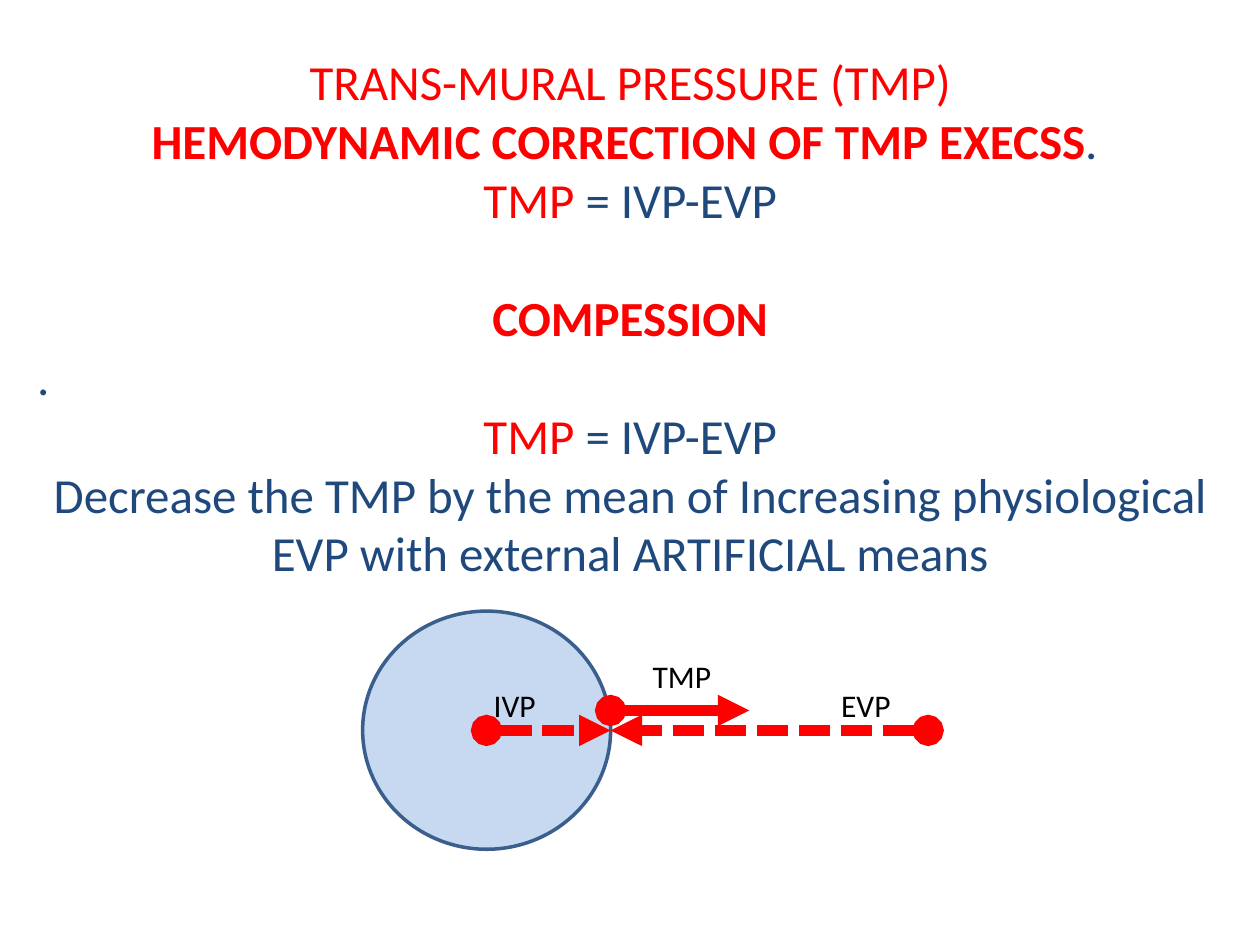
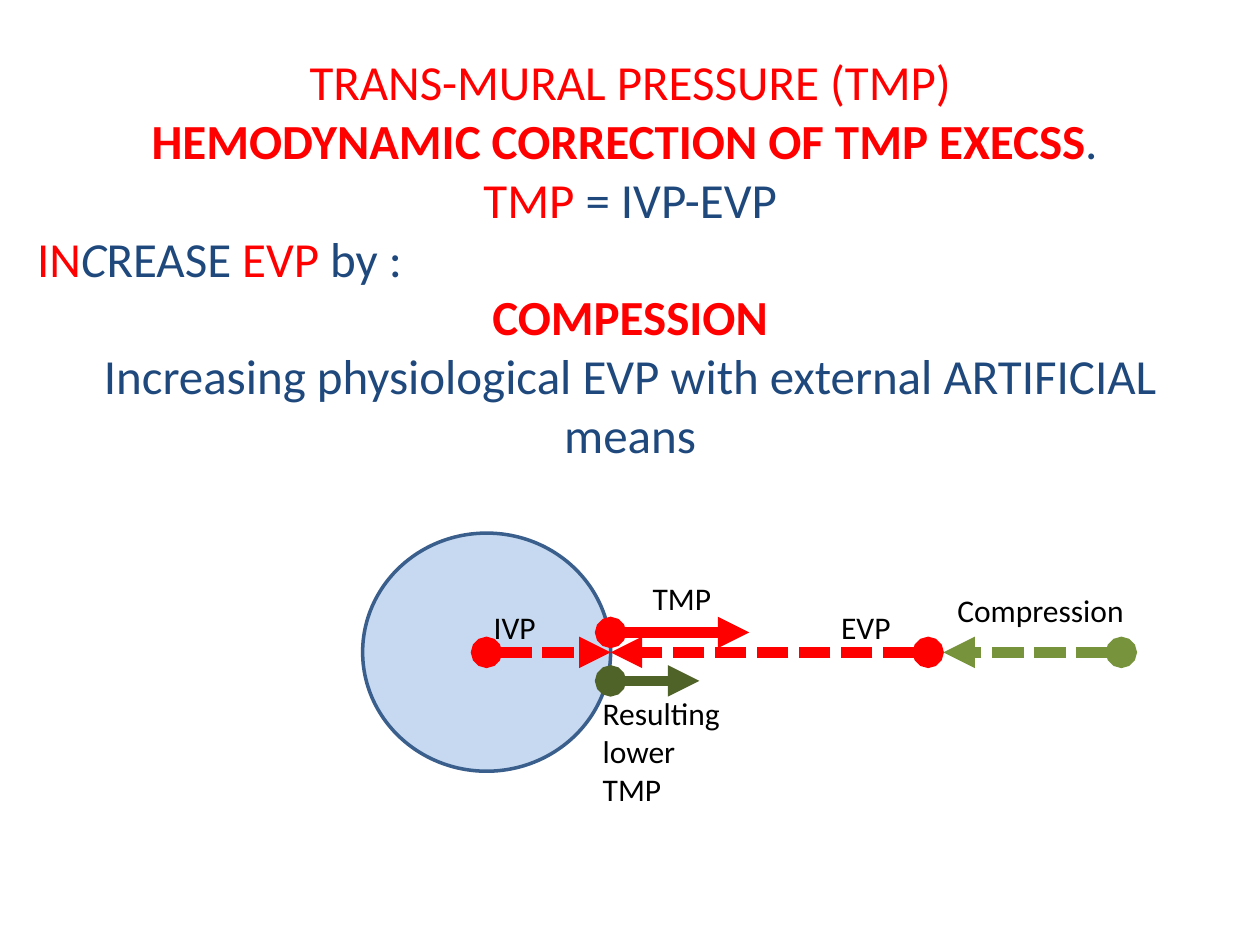
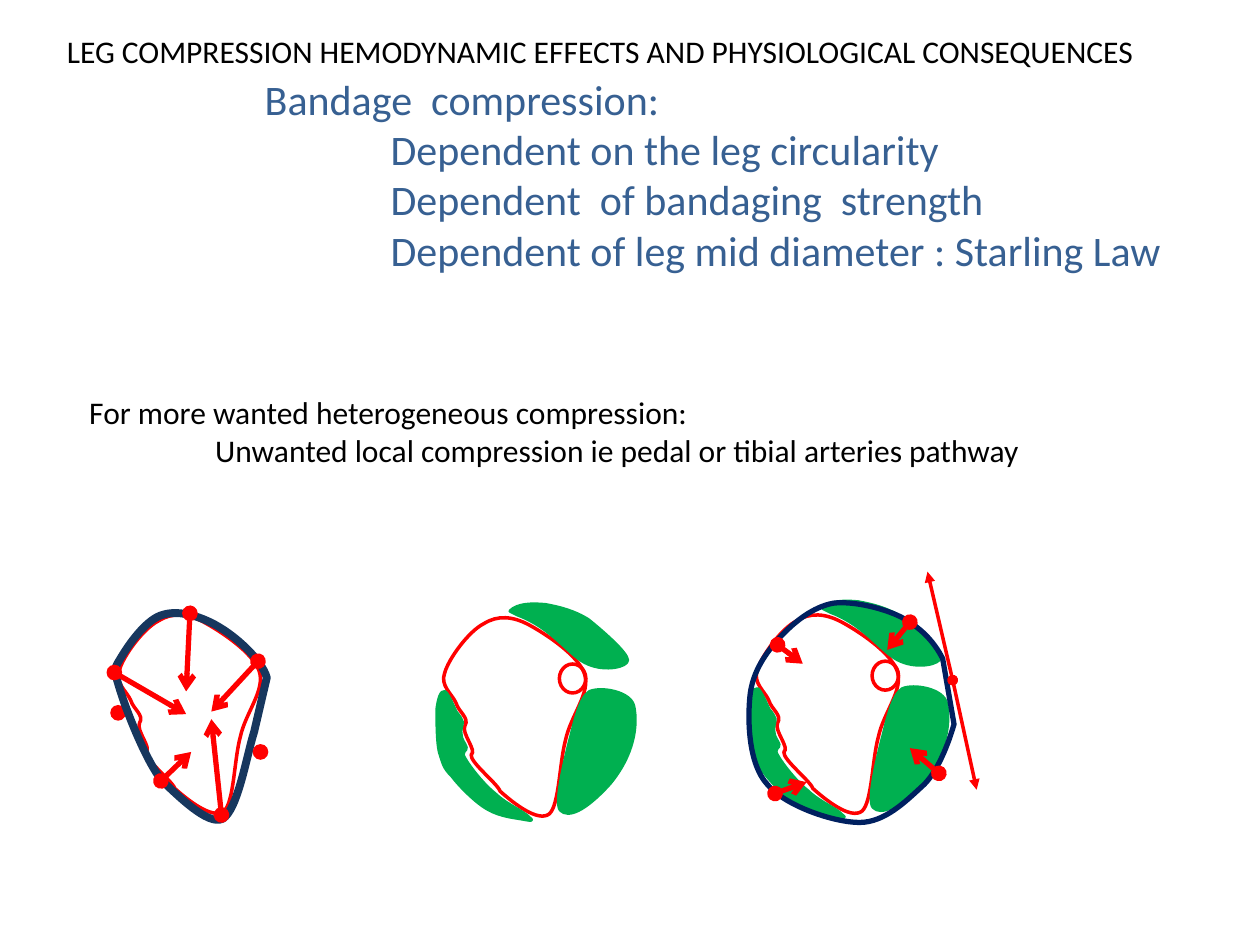
from pptx import Presentation
from pptx.dml.color import RGBColor
from pptx.enum.dml import MSO_LINE as DASH
from pptx.enum.shapes import MSO_CONNECTOR as CONN, MSO_SHAPE as SHAPE
from pptx.enum.text import MSO_AUTO_SIZE as AUTO, PP_ALIGN as ALIGN
from pptx.oxml.ns import qn
from pptx.util import Pt
from lxml.etree import SubElement

FONT = "Calibri"
RED = RGBColor(0xFF, 0x00, 0x00)
NAVY = RGBColor(0x1F, 0x49, 0x7D)
BLUE = RGBColor(0x37, 0x60, 0x92)
BLACK = RGBColor(0x00, 0x00, 0x00)
WHITE = RGBColor(0xFF, 0xFF, 0xFF)
VEIN_FILL = RGBColor(0xC6, 0xD9, 0xF1)
VEIN_LINE = RGBColor(0x3A, 0x5F, 0x8C)
OLIVE = RGBColor(0x77, 0x93, 0x3C)
DARK_OLIVE = RGBColor(0x4F, 0x62, 0x28)
GREEN = RGBColor(0x00, 0xB0, 0x50)
BANDAGE_TIGHT = RGBColor(0x17, 0x37, 0x5E)
BANDAGE_PADDED = RGBColor(0x00, 0x20, 0x60)

LINE_28 = 34     # height of one 28 pt line
GRID = 0.72      # points per unit of the leg drawings

# Leg outlines: a start point, then curves (6 numbers) or straight lines (2)
LEG = [(1, 44), (4, 33, 20, 11, 32, 5), (43, -2, 55, -1, 68, 6),
       (81, 13, 107, 30, 112, 45), (117, 60, 101, 78, 97, 97),
       (92, 115, 92, 149, 84, 156), (75, 163, 55, 147, 45, 138),
       (43, 132, 21, 115, 22, 109), (27, 106, 14, 92, 17, 86),
       (21, 80, 12, 75, 10, 68), (7, 61, -3, 54, 1, 44)]
PAD_RIGHT = [(151, 71), (149, 59, 125, 55, 116, 59), (108, 64, 104, 84, 100, 99),
             (96, 115, 88, 148, 93, 153), (99, 159, 112, 154, 132, 132),
             (151, 109, 154, 86, 151, 71)]
PAD_LEFT = [(1, 59), (3, 59, 8, 71, 10, 75), (13, 79, 14, 80, 15, 83),
            (15, 86, 13, 90, 14, 93), (14, 97, 17, 100, 18, 103),
            (19, 106, 13, 106, 17, 112), (21, 119, 32, 133, 41, 140),
            (49, 148, 65, 155, 68, 159), (72, 162, 69, 161, 63, 160),
            (58, 159, 45, 158, 35, 152), (26, 147, 13, 134, 7, 126),
            (0, 119, 0, 116, -3, 107), (-5, 99, -5, 81, -5, 73),
            (-4, 65, -2, 58, 1, 59)]
PAD_TOP = [(59, -2), (88, 9, 100, 31, 115, 37), (129, 43, 146, 39, 146, 34),
           (146, 28, 125, 10, 115, 2), (104, -5, 92, -8, 81, -10),
           (71, -11, 59, -11, 53, -5), (59, -2)]
TIGHT_WRAP = [(3, 33), (9, 23, 23, 3, 36, 0), (49, -4, 68, 2, 82, 11),
              (95, 19, 114, 36, 118, 50), (108, 93),
              (102, 112, 95, 155, 83, 162), (71, 168, 46, 142, 35, 132),
              (22, 116, 6, 75, 1, 58), (-4, 42, -3, 43, 3, 33)]
PADDED_WRAP = [(148, 35), (141, 21, 130, 10, 115, 2), (101, -5, 77, -11, 61, -9),
               (45, -6, 30, 6, 19, 18), (8, 30, -3, 45, -5, 65),
               (-7, 85, -6, 119, 9, 135), (23, 152, 62, 165, 82, 165),
               (102, 165, 119, 148, 131, 137), (144, 126, 153, 101, 157, 87),
               (148, 35)]


# Shared helpers
def add_text(slide, x, y, w, h, lines, size=18, color=BLACK):
    """Each line is a string or a dict of runs, align, before and indent."""
    tf = slide.shapes.add_textbox(Pt(x), Pt(y), Pt(w), Pt(h)).text_frame
    tf.word_wrap = True
    tf.auto_size = AUTO.SHAPE_TO_FIT_TEXT
    for i, line in enumerate(lines):
        if isinstance(line, str):
            line = {"runs": [(line, color)]}
        p = tf.paragraphs[0] if i == 0 else tf.add_paragraph()
        p.alignment = line.get("align", ALIGN.LEFT)
        p.space_before = Pt(line.get("before", 0))
        if "indent" in line:
            p._p.get_or_add_pPr().set("marL", str(Pt(line["indent"])))
        for text, run_color, *style in line["runs"]:
            r = p.add_run()
            r.text = text
            r.font.name, r.font.size = FONT, Pt(size)
            r.font.color.rgb = run_color
            r.font.bold = "bold" in style
            r.font.italic = "italic" in style


def centered(*runs, before=0):
    return {"runs": runs, "align": ALIGN.CENTER, "before": before}


def add_line(slide, x1, y1, x2, y2, color=RED, width=3.0, tail="arrow", dashed=False):
    """A line with a dot at its start and an optional arrowhead at its end."""
    c = slide.shapes.add_connector(CONN.STRAIGHT, Pt(x1), Pt(y1), Pt(x2), Pt(y2))
    c.line.color.rgb, c.line.width = color, Pt(width)
    if dashed:
        c.line.dash_style = DASH.SQUARE_DOT
    ln = c.line._get_or_add_ln()
    SubElement(ln, qn("a:headEnd"), type="oval")
    if tail:
        SubElement(ln, qn("a:tailEnd"), type=tail)
    SubElement(c._element.spPr, qn("a:effectLst"))


def paint(sp, line, width, fill=None):
    sp.shadow.inherit = False
    if fill is None:
        sp.fill.background()
    else:
        sp.fill.solid()
        sp.fill.fore_color.rgb = fill
    sp.line.color.rgb, sp.line.width = line, Pt(width)


def add_ellipse(slide, x, y, w, h, line, fill=None):
    sp = slide.shapes.add_shape(SHAPE.OVAL, Pt(x), Pt(y), Pt(w), Pt(h))
    paint(sp, line, 2, fill)


def add_outline(slide, x, y, outline, line, width=2.0, fill=None):
    """Build the outline through its nodes, then bend the curved segments."""
    def place(px, py):
        return Pt(x + px * GRID), Pt(y + py * GRID)

    nodes = [place(*seg[-2:]) for seg in outline]
    fb = slide.shapes.build_freeform(*nodes[0])
    fb.add_line_segments(nodes[1:], close=True)
    sp = fb.convert_to_shape()
    steps = list(sp._element.spPr.iter(qn("a:lnTo")))
    for step, seg in zip(steps, outline[1:]):
        if len(seg) == 6:
            step.tag = qn("a:cubicBezTo")
            for i in (0, 1):
                cx, cy = place(*seg[2 * i:2 * i + 2])
                pt = SubElement(step, qn("a:pt"), x=str(cx - sp.left), y=str(cy - sp.top))
                step.insert(i, pt)
    paint(sp, line, width, fill)


# Pressure slides
FORMULA = centered(("TMP ", RED), ("= IVP-EVP", NAVY))


def add_pressure_text(slide, h, lines):
    heading = [
        centered(("TRANS-MURAL PRESSURE (TMP)", RED)),
        centered(("HEMODYNAMIC CORRECTION OF TMP EXECSS", RED, "bold"), (". ", NAVY)),
        FORMULA,
    ]
    add_text(slide, 14.1, 25.9, 691.9, h, heading + lines, size=28)


def add_vein(slide, x, y):
    """Vein section with the pressures on its wall; x, y is its top left."""
    wall, mid = x + 141.7, y + 68.2
    add_ellipse(slide, x, y, 141.7, 136.1, VEIN_LINE, VEIN_FILL)
    for start in (x + 323.2, x + 70.8):
        add_line(slide, start, mid, wall, mid, width=6, tail="triangle", dashed=True)
    add_line(slide, wall, y + 56.8, x + 221, y + 56.8, width=6, tail="triangle")
    for label, dx, dy in (("IVP", 67.8, 39.2), ("EVP", 266.3, 39.2), ("TMP", 158.6, 22.7)):
        add_text(slide, x + dx, y + dy, 85, 29, [label])


def add_compression(slide, x, y):
    """Compression and the lower pressure it leaves, for the vein at x, y."""
    add_line(slide, x + 433.6, y + 68.2, x + 331.9, y + 68.2, OLIVE, 6,
             "triangle", dashed=True)
    add_text(slide, x + 332.8, y + 29.5, 113, 29, ["Compression"])
    add_line(slide, x + 141.7, y + 84.5, x + 192.4, y + 84.5, DARK_OLIVE, 6, "triangle")
    add_text(slide, x + 130.1, y + 88.6, 85, 72.7, ["Resulting lower  TMP"])


def build_tmp_slide(slide):
    add_pressure_text(slide, 356.4, [
        centered(("COMPESSION", RED, "bold"), before=LINE_28),
        {"runs": [(".", NAVY)]},
        FORMULA,
        centered(("Decrease the TMP by the mean of Increasing physiological "
                  "EVP with external ARTIFICIAL means", NAVY)),
    ])
    add_vein(slide, 207.2, 349.2)


def build_compression_slide(slide):
    add_pressure_text(slide, 288.7, [
        {"runs": [("IN", RED), ("C", NAVY, "italic"), ("REASE ", NAVY),
                  ("EVP ", RED), ("by :", NAVY)]},
        centered(("COMPESSION", RED, "bold")),
        centered(("Increasing physiological EVP with external ARTIFICIAL means", NAVY)),
    ])
    add_vein(slide, 207.2, 304.6)
    add_compression(slide, 207.2, 304.6)


# Leg slide
def add_leg_lines(slide, x, y, lines, **style):
    for x1, y1, x2, y2 in lines:
        add_line(slide, x + x1 * GRID, y + y1 * GRID, x + x2 * GRID, y + y2 * GRID, **style)


def add_tight_leg(slide, x, y):
    """Leg wrapped without padding."""
    add_outline(slide, x, y, LEG, RED, fill=WHITE)
    add_leg_lines(slide, x, y, [(0, 78, 1, 78)], tail=None)
    add_outline(slide, x, y, TIGHT_WRAP, BANDAGE_TIGHT, 4.5)
    add_leg_lines(slide, x, y, [(113, 109, 114, 109)], tail=None)
    add_leg_lines(slide, x, y, [(111, 37, 74, 77), (34, 132, 58, 109), (-3, 46, 54, 79),
                                (57, -1, 54, 61), (82, 159, 74, 83)])


def add_padded_leg(slide, x, y):
    """Leg with three pads and its bone."""
    add_outline(slide, x, y, LEG, RED, fill=WHITE)
    for pad in (PAD_RIGHT, PAD_LEFT, PAD_TOP):
        add_outline(slide, x, y, pad, GREEN, fill=GREEN)
    add_ellipse(slide, x + 92 * GRID, y + 37 * GRID, 21 * GRID, 23 * GRID, RED)


def add_wrapped_padded_leg(slide, x, y):
    """Padded leg with its bandage, pressures and tension."""
    add_padded_leg(slide, x, y)
    add_outline(slide, x, y, PADDED_WRAP, BANDAGE_PADDED, 3)
    add_leg_lines(slide, x, y, [(15, 142, 40, 133), (17, 24, 37, 39),
                                (122, 6, 104, 28), (145, 126, 122, 106)])
    add_leg_lines(slide, x, y, [(156, 52, 136, -34), (156, 52, 175, 139)],
                  width=2, tail="triangle")


def build_leg_slide(slide):
    add_text(slide, 31.1, 14.9, 666, 29,
             ["LEG COMPRESSION HEMODYNAMIC EFFECTS AND PHYSIOLOGICAL CONSEQUENCES"])
    add_text(slide, 43.9, 221, 630, 51, [
        "For more wanted heterogeneous compression:",
        {"runs": [("Unwanted local compression ie pedal or tibial arteries pathway", BLACK)],
         "indent": 72},
    ])
    factors = ("Dependent on the leg circularity", "Dependent  of bandaging  strength",
               "Dependent of leg mid diameter : Starling Law")
    add_text(slide, 72.2, 38.2, 600.5, 152.6,
             [{"runs": [("Bandage  compression:", BLUE)], "indent": 72}]
             + [{"runs": [(f, BLUE)], "indent": 144} for f in factors], size=24)
    add_tight_leg(slide, 67.5, 351.2)
    add_padded_leg(slide, 253.4, 352.8)
    add_wrapped_padded_leg(slide, 432.1, 351.2)


def main():
    prs = Presentation()
    prs.slide_width, prs.slide_height = Pt(720), Pt(540)
    for build in (build_tmp_slide, build_compression_slide, build_leg_slide):
        build(prs.slides.add_slide(prs.slide_layouts[6]))
    prs.save("out.pptx")


if __name__ == "__main__":
    main()
